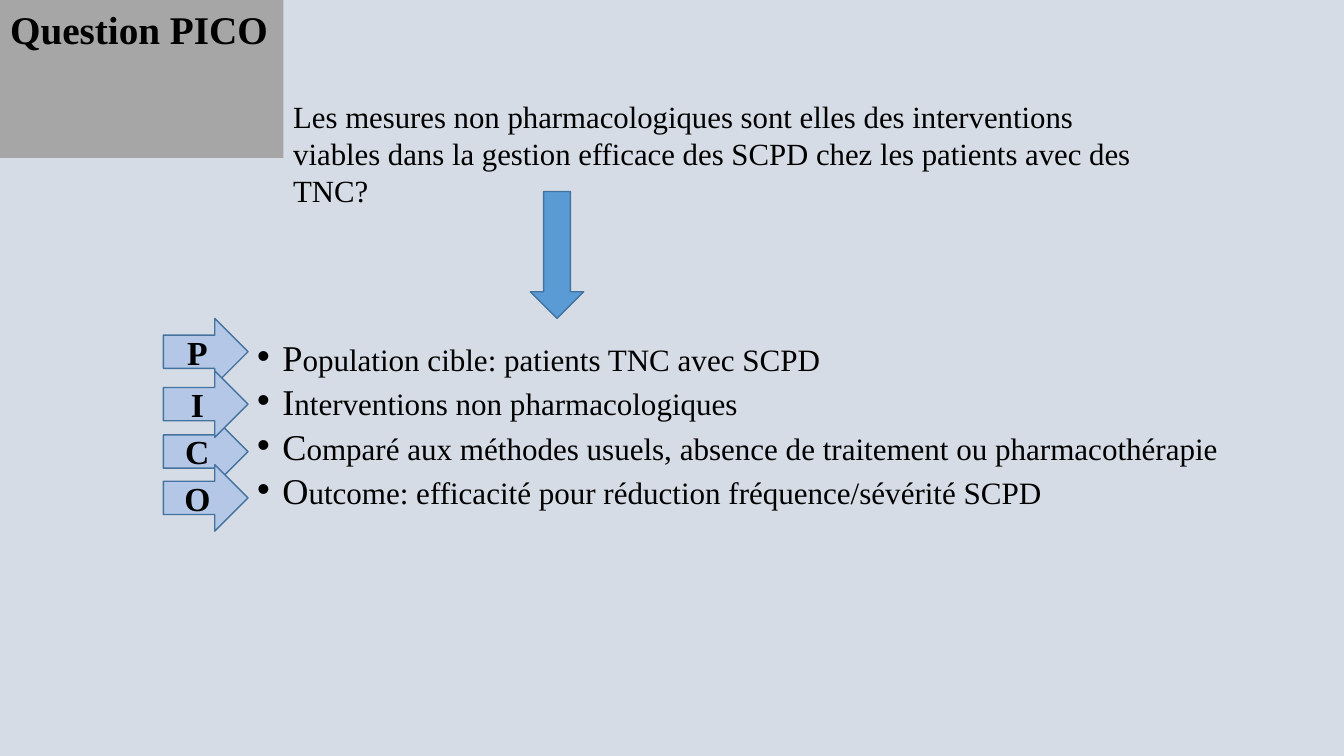
import dataclasses

import pptx
import pptx.dml.color
import pptx.enum.shapes
import pptx.enum.text
import pptx.oxml
import pptx.oxml.ns
import pptx.shapes.autoshape
import pptx.text.text
import pptx.util

RGBColor = pptx.dml.color.RGBColor
BACKGROUND = RGBColor(0xD6, 0xDC, 0xE5)
TITLE_GREY = RGBColor(0xA6, 0xA6, 0xA6)
ARROW_BLUE = RGBColor(0x5B, 0x9B, 0xD5)
LETTER_BLUE = RGBColor(0xB4, 0xC7, 0xE7)
OUTLINE_BLUE = RGBColor(0x43, 0x73, 0x9E)
BLACK = RGBColor(0, 0, 0)

FONT = "Times New Roman"
EMU_PER_PX = 9144  # 100 px to the inch
BULLET_INDENT = 25

QUESTION = (
    "Les mesures non pharmacologiques sont elles des interventions viables dans la "
    "gestion efficace des SCPD chez les patients avec des TNC?"
)


@dataclasses.dataclass(frozen=True)
class Box:
    left: int
    top: int
    width: int
    height: int

    def emu(self) -> tuple[int, int, int, int]:
        return px(self.left), px(self.top), px(self.width), px(self.height)


@dataclasses.dataclass(frozen=True)
class Criterion:
    letter: str
    rest: str
    arrow_top: int


CRITERIA = [
    Criterion("P", "opulation cible: patients TNC avec SCPD", 316),
    Criterion("I", "nterventions non pharmacologiques", 368),
    Criterion("C", "omparé aux méthodes usuels, absence de traitement ou pharmacothérapie", 415),
    Criterion("O", "utcome: efficacité pour réduction fréquence/sévérité SCPD", 461),
]
STACKING_ORDER = "COPI"


def px(length: int) -> int:
    return pptx.util.Emu(length * EMU_PER_PX)


def place(shape, box: Box) -> None:
    shape.left, shape.top, shape.width, shape.height = box.emu()


def add_run(paragraph, text: str, size: float, bold: bool = False) -> None:
    run = paragraph.add_run()
    run.text = text
    run.font.name = FONT
    run.font.size = pptx.util.Pt(size)
    run.font.bold = bold
    run.font.color.rgb = BLACK


def add_bullet(paragraph) -> None:
    properties = paragraph._p.get_or_add_pPr()
    properties.set("marL", str(px(BULLET_INDENT)))
    properties.set("indent", str(-px(BULLET_INDENT)))
    namespace = pptx.oxml.ns.nsdecls("a")
    for tag in ('buFont typeface="Arial"', 'buChar char="•"'):
        properties.append(pptx.oxml.parse_xml(f"<a:{tag} {namespace}/>"))


def add_arrow(
    slide, kind: pptx.enum.shapes.MSO_SHAPE, box: Box, color: RGBColor
) -> pptx.shapes.autoshape.Shape:
    arrow = slide.shapes.add_shape(kind, *box.emu())
    arrow.shadow.inherit = False
    arrow.fill.solid()
    arrow.fill.fore_color.rgb = color
    arrow.line.color.rgb = OUTLINE_BLUE
    arrow.line.width = pptx.util.Pt(1)
    return arrow


def add_title(slide) -> None:
    title = slide.shapes.title
    place(title, Box(0, 0, 281, 57))
    title.fill.solid()
    title.fill.fore_color.rgb = TITLE_GREY
    frame = title.text_frame
    frame.word_wrap = False
    frame.auto_size = pptx.enum.text.MSO_AUTO_SIZE.SHAPE_TO_FIT_TEXT
    frame.vertical_anchor = pptx.enum.text.MSO_ANCHOR.TOP
    paragraph = frame.paragraphs[0]
    paragraph.alignment = pptx.enum.text.PP_ALIGN.LEFT
    add_run(paragraph, "Question PICO", 28, bold=True)


def add_criteria_list(slide) -> None:
    body = slide.placeholders[1]
    place(body, Box(245, 339, 1052, 345))
    frame = body.text_frame
    frame.auto_size = pptx.enum.text.MSO_AUTO_SIZE.NONE
    frame.vertical_anchor = pptx.enum.text.MSO_ANCHOR.TOP
    for index, criterion in enumerate(CRITERIA):
        paragraph = frame.add_paragraph() if index else frame.paragraphs[0]
        paragraph.line_spacing = 0.7
        paragraph.space_before = pptx.util.Pt(10)
        add_bullet(paragraph)
        add_run(paragraph, criterion.letter, 25.9)
        add_run(paragraph, criterion.rest, 22.2)


def add_letter_arrow(slide, criterion: Criterion) -> None:
    box = Box(162, criterion.arrow_top, 84, 66)
    arrow = add_arrow(slide, pptx.enum.shapes.MSO_SHAPE.RIGHT_ARROW, box, LETTER_BLUE)
    arrow.text_frame.vertical_anchor = pptx.enum.text.MSO_ANCHOR.MIDDLE
    paragraph = arrow.text_frame.paragraphs[0]
    paragraph.alignment = pptx.enum.text.PP_ALIGN.CENTER
    add_run(paragraph, criterion.letter, 24, bold=True)


def add_question(slide) -> None:
    frame = slide.shapes.add_textbox(*Box(281, 92, 869, 84).emu()).text_frame
    frame.word_wrap = True
    frame.auto_size = pptx.enum.text.MSO_AUTO_SIZE.SHAPE_TO_FIT_TEXT
    add_run(frame.paragraphs[0], QUESTION, 22)


def main() -> None:
    presentation = pptx.Presentation()
    presentation.slide_width, presentation.slide_height = px(1333), px(750)
    slide = presentation.slides.add_slide(presentation.slide_layouts[1])
    slide.background.fill.solid()
    slide.background.fill.fore_color.rgb = BACKGROUND

    add_title(slide)
    add_criteria_list(slide)
    add_arrow(slide, pptx.enum.shapes.MSO_SHAPE.DOWN_ARROW, Box(526, 190, 53, 126), ARROW_BLUE)
    for criterion in sorted(CRITERIA, key=lambda item: STACKING_ORDER.index(item.letter)):
        add_letter_arrow(slide, criterion)
    add_question(slide)

    presentation.save("out.pptx")


if __name__ == "__main__":
    main()
